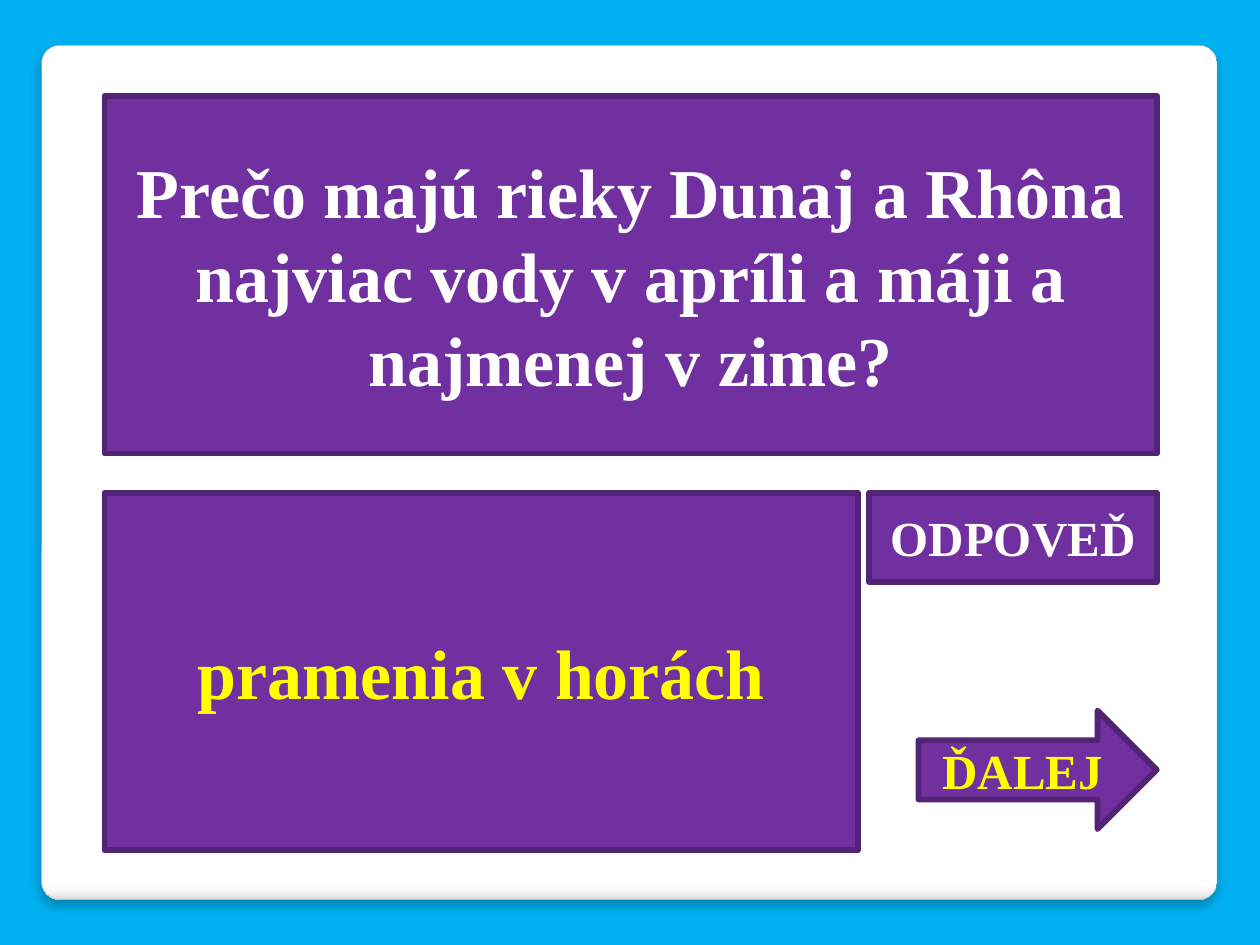
from dataclasses import dataclass

from pptx import Presentation
from pptx.dml.color import RGBColor as Rgb
from pptx.enum.shapes import MSO_SHAPE as Kind
from pptx.enum.text import MSO_ANCHOR as Anchor, MSO_AUTO_SIZE as Fit, PP_ALIGN as Align
from pptx.oxml import parse_xml as parse
from pptx.oxml.ns import nsdecls
from pptx.util import Inches, Pt

WIDE, HIGH = 10, 7.5
LEFT, RIGHT = 0.83, 9.18
TOP, LOW, TALL = 0.76, 3.91, 2.84
WHITE, GOLD = "FFFFFF", "FFFF00"
STOPS = ((0, WHITE), (98, WHITE), (99, "F7F7F7"), (100, "DADADA"))


@dataclass(frozen=True)
class Box:
    """A purple quiz box, with its place in inches."""
    text: str
    left: float
    top: float
    width: float
    height: float
    size: int
    ink: str
    kind: Kind = Kind.RECTANGLE


ASK = Box("Prečo majú rieky Dunaj a Rhôna najviac vody v apríli a máji a najmenej v zime?",
          LEFT, TOP, RIGHT - LEFT, TALL, 40, WHITE)
BOXES = (
    Box("pramenia v horách", LEFT, LOW, 5.98, TALL, 40, GOLD),
    Box("ODPOVEĎ", RIGHT - 2.28, LOW, 2.28, 0.71, 28, WHITE),
    Box("ĎALEJ", RIGHT - 1.89, 5.64, 1.89, 0.94, 28, GOLD, Kind.RIGHT_ARROW),
)


def paint(part, tint: str) -> None:
    """Give a fill or a line fill one solid colour."""
    part.solid()
    part.fore_color.rgb = Rgb.from_string(tint)


def edge(shape, tint: str, width: float) -> None:
    """Outline a shape and turn off its shadow."""
    paint(shape.line.fill, tint)
    shape.line.width = Pt(width)
    shape.shadow.inherit = False


def dress(shape, box: Box) -> None:
    """Place, colour and label a quiz box."""
    shape.left, shape.top = Inches(box.left), Inches(box.top)
    shape.width, shape.height = Inches(box.width), Inches(box.height)
    paint(shape.fill, "7030A0")
    edge(shape, "532476", 3.35)
    frame = shape.text_frame
    frame.text = box.text
    frame.word_wrap, frame.auto_size = True, Fit.NONE
    frame.vertical_anchor = Anchor.MIDDLE
    para = frame.paragraphs[0]
    para.alignment = Align.CENTER
    font = para.font
    font.name, font.size, font.bold = "Times New Roman", Pt(box.size), True
    paint(font.fill, box.ink)


def panel(slide) -> None:
    """Draw the white rounded card behind all else."""
    card = slide.shapes.add_shape(Kind.ROUNDED_RECTANGLE, Inches(0.33), Inches(0.36),
                                  Inches(9.33), Inches(6.78))
    card.adjustments[0] = 0.021
    edge(card, "A4A4A4", 0.16)
    props = card.element.spPr
    stops = "".join(f'<a:gs pos="{pos * 1000}"><a:srgbClr val="{tint}"/></a:gs>'
                    for pos, tint in STOPS)
    props.insert(2, parse(f'<a:gradFill {nsdecls("a")}><a:gsLst>{stops}</a:gsLst>'
                          '<a:lin ang="5400000" scaled="0"/></a:gradFill>'))
    props[-1].append(parse(
        f'<a:outerShdw {nsdecls("a")} blurRad="{Pt(6)}" dist="{Pt(4)}" dir="5400000" '
        'algn="t" rotWithShape="0"><a:srgbClr val="000000"><a:alpha val="25000"/>'
        '</a:srgbClr></a:outerShdw>'))
    slide.shapes.title.element.addprevious(card.element)


def main() -> None:
    """Build the quiz slide and save it."""
    deck = Presentation()
    deck.slide_width, deck.slide_height = Inches(WIDE), Inches(HIGH)
    slide = deck.slides.add_slide(deck.slide_layouts[5])
    paint(slide.background.fill, "00B0F0")
    panel(slide)
    dress(slide.shapes.title, ASK)
    for box in BOXES:
        dress(slide.shapes.add_shape(box.kind, 0, 0, 0, 0), box)
    deck.save("out.pptx")


if __name__ == "__main__":
    main()
